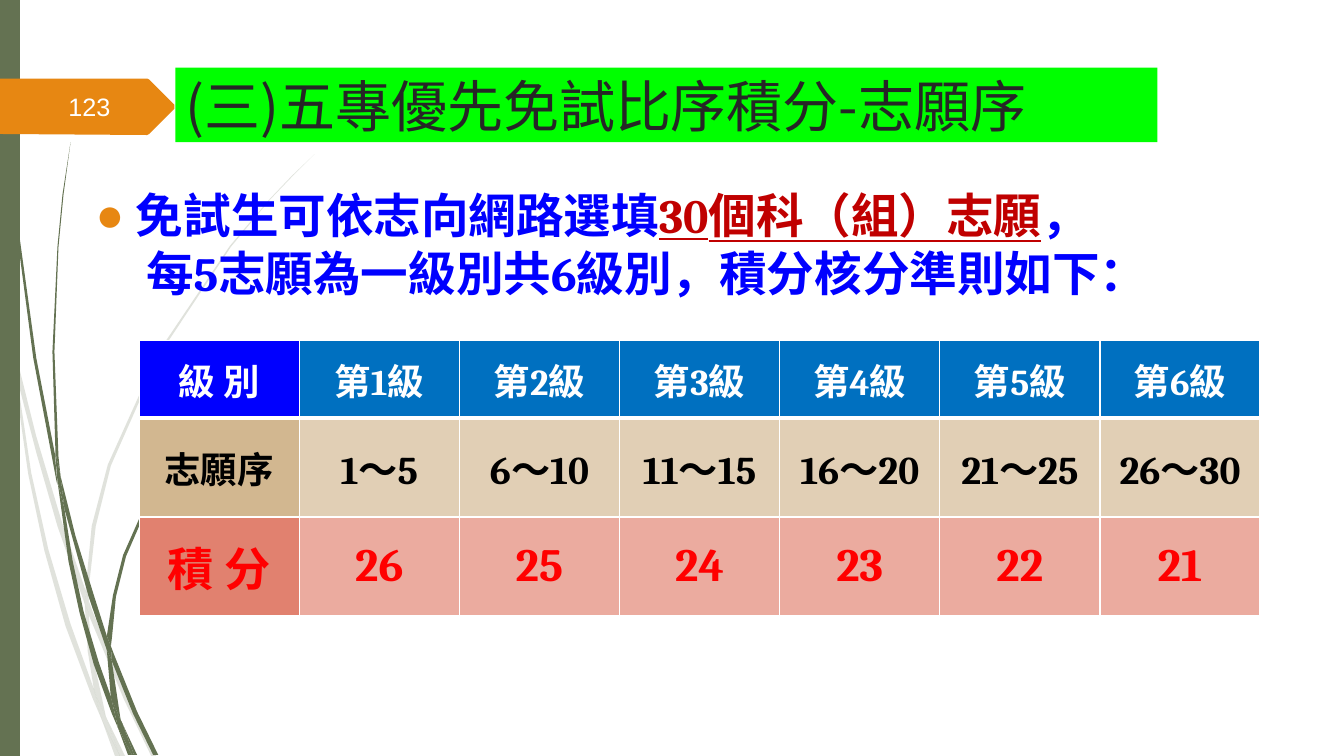
from dataclasses import dataclass

from lxml import etree
from pptx import Presentation
from pptx.dml.color import RGBColor
from pptx.enum import shapes as kinds, text as t
from pptx.oxml import ns
from pptx.util import Inches, Pt

GREEN = RGBColor(0x64, 0x72, 0x52)
ORANGE = RGBColor(0xE7, 0x87, 0x12)
LIME = RGBColor(0x00, 0xFF, 0x00)
CHARCOAL = RGBColor(0x26, 0x26, 0x26)
WHITE = RGBColor(0xFF, 0xFF, 0xFF)
BLACK = RGBColor(0x00, 0x00, 0x00)
BLUE = RGBColor(0x00, 0x00, 0xFF)
SKY = RGBColor(0x00, 0x70, 0xC0)
DARK_RED = RGBColor(0xC0, 0x00, 0x00)
RED = RGBColor(0xFF, 0x00, 0x00)
TAN = RGBColor(0xD2, 0xB7, 0x90)
SAND = RGBColor(0xE1, 0xCF, 0xB5)
CORAL = RGBColor(0xE1, 0x81, 0x6F)
PINK = RGBColor(0xEB, 0xAB, 0x9F)

CJK = "Noto Sans CJK SC"
SERIF = "Cambria"

Outline = tuple[tuple[float, float], ...]

PALE_STRANDS: tuple[Outline, ...] = (
    ((0.11, 3.5), (0.08, 3.22), (0, 2.82), (0, 2.99), (0.1, 3.44)),
    ((0.57, 5.22), (0.84, 5.99), (0.85, 5.86), (0.62, 5.2), (0.36, 4.33), (0.14, 3.45),
     (0.17, 3.76), (0.36, 4.49)),
    ((0.92, 6.07), (0.88, 5.96), (0.88, 6.1), (1.23, 6.94), (1.5, 7.5), (1.55, 7.5), (1.27, 6.92)),
    ((1.19, 7.5), (1.24, 7.5), (1.05, 7.11)),
    ((0.93, 6.83), (0.7, 6.19), (0.48, 5.45), (0.31, 4.69), (0.17, 3.76), (0.11, 3.5),
     (0.28, 4.7), (0.44, 5.46), (0.65, 6.21), (0.92, 6.93), (1.01, 7.14), (0.99, 7.07)),
    ((0.84, 5.99), (0.87, 6.46), (0.93, 6.83), (0.96, 6.92), (1.05, 7.11), (1.04, 7.06),
     (0.91, 6.46), (0.88, 6.1), (0.88, 6.08)),
    ((0.88, 5.84), (0.95, 5.22), (1.1, 4.62), (1.6, 3.49), (2.29, 2.45), (2.68, 1.98),
     (2.9, 1.75), (3.12, 1.53), (2.89, 1.75), (2.68, 1.97), (2.28, 2.44), (1.58, 3.48),
     (1.07, 4.61), (0.91, 5.22), (0.85, 5.84), (0.85, 5.86), (0.88, 5.96)),
    ((1.01, 7.14), (1.14, 7.5), (1.19, 7.5)),
    ((0.88, 6.08), (0.88, 6.1), (0.88, 5.96), (0.85, 5.86), (0.84, 5.99)),
    ((0.96, 6.92), (0.93, 6.83), (0.99, 7.07), (1.01, 7.14), (1.19, 7.5), (1.05, 7.11)),
)
DARK_STRANDS: tuple[Outline, ...] = (
    ((0.07, 1.1), (0.17, 2.33), (0.33, 3.55), (0.56, 4.77), (0.57, 4.81), (0.55, 4.57),
     (0.55, 4.53), (0.36, 3.55), (0.19, 2.32), (0.08, 1.09), (0.05, 0.48), (0.03, 0), (0.03, 0.48)),
    ((0.88, 5.92), (1.06, 6.45), (1.06, 6.33), (1.06, 6.31), (0.93, 5.9), (0.75, 5.32),
     (0.6, 4.72), (0.64, 5.05)),
    ((1.13, 6.49), (1.1, 6.41), (1.11, 6.56), (1.32, 7.08), (1.52, 7.49), (1.57, 7.49), (1.36, 7.06)),
    ((1.1, 6.91), (0.98, 6.57), (0.83, 6.07), (0.72, 5.56), (0.64, 5.05), (0.57, 4.77),
     (0.68, 5.57), (0.79, 6.08), (0.93, 6.59), (1.11, 7.08), (1.17, 7.22), (1.16, 7.17)),
    ((0.6, 4.72), (0.58, 4.53), (0.54, 3.49), (0.58, 2.45), (0.63, 1.93), (0.7, 1.41),
     (0.62, 1.93), (0.57, 2.45), (0.52, 3.49), (0.55, 4.49)),
    ((1.33, 7.49), (1.36, 7.49), (1.22, 7.19)),
    ((0.57, 4.77), (0.64, 5.05), (0.6, 4.72), (0.55, 4.49), (0.55, 4.53)),
    ((1.11, 6.33), (1.15, 5.92), (1.25, 5.52), (1.58, 4.76), (2.05, 4.06), (2.31, 3.74),
     (2.46, 3.59), (2.61, 3.44), (2.45, 3.58), (2.31, 3.73), (2.04, 4.05), (1.56, 4.74),
     (1.22, 5.51), (1.12, 5.91), (1.06, 6.31), (1.1, 6.41)),
    ((1.17, 7.22), (1.27, 7.49), (1.31, 7.49)),
    ((1.06, 6.45), (1.1, 6.92), (1.16, 7.06), (1.22, 7.19), (1.2, 7.16), (1.11, 6.56), (1.09, 6.51)),
    ((1.06, 6.45), (1.09, 6.51), (1.11, 6.56), (1.1, 6.41), (1.06, 6.31), (1.06, 6.33)),
    ((1.16, 7.06), (1.1, 6.91), (1.16, 7.17), (1.17, 7.22), (1.31, 7.49), (1.33, 7.49), (1.22, 7.19)),
)
BAR: Outline = ((0, 0), (0.2, 0), (0.2, 7.5), (0, 7.5))
NUMBER_TAG: Outline = ((1.73, 1.08), (1.48, 1.33), (1.46, 1.34), (0, 1.33), (0, 0.78),
                       (1.46, 0.78), (1.48, 0.79), (1.73, 1.04))


@dataclass(frozen=True)
class ScoreRow:
    height: float
    label: str
    values: tuple[str, ...]
    label_size: int
    value_size: int
    color: RGBColor
    label_fill: RGBColor
    value_fill: RGBColor
    bottom_line: float = 1


LEVELS = range(1, 7)
SCORE_ROWS = (
    ScoreRow(0.77, "級 別", tuple(f"第{n}級" for n in LEVELS), 26, 26, WHITE, BLUE, SKY, 3),
    ScoreRow(0.98, "志願序", tuple(f"{5 * n - 4}～{5 * n}" for n in LEVELS), 26, 28, BLACK, TAN, SAND),
    ScoreRow(0.98, "積 分", tuple(str(27 - n) for n in LEVELS), 33, 33, RED, CORAL, PINK),
)


def write(para, content: str, *, size: float, color: RGBColor, latin: str = SERIF,
          bold: bool = False, underline: bool = False) -> None:
    span = para.add_run()
    span.text = content
    span.font.size = Pt(size)
    span.font.color.rgb = color
    span.font.name = latin
    span.font.bold = bold
    span.font.underline = underline
    etree.SubElement(span.font._element, ns.qn("a:ea"), typeface=CJK)


def draw_outline(page, outline: Outline, color: RGBColor, opacity: int = 100) -> None:
    points = [(Inches(x), Inches(y)) for x, y in outline]
    builder = page.shapes.build_freeform(*points[0])
    builder.add_line_segments(points[1:], close=True)
    shape = builder.convert_to_shape()
    shape.shadow.inherit = False
    shape.fill.solid()
    shape.fill.fore_color.rgb = color
    shape.line.fill.background()
    if opacity < 100:
        tint = next(shape._element.spPr.iter(ns.qn("a:srgbClr")))
        etree.SubElement(tint, ns.qn("a:alpha"), val=str(opacity * 1000))


def add_text_box(page, left: float, top: float, width: float, height: float):
    box = page.shapes.add_textbox(Inches(left), Inches(top), Inches(width), Inches(height))
    box.text_frame.word_wrap = True
    return box.text_frame


def indent(para, margin: float, first: float, bullet: bool) -> None:
    props = para._p.get_or_add_pPr()
    props.set("marL", str(Inches(margin)))
    props.set("indent", str(Inches(first)))
    if bullet:
        tint = etree.SubElement(props, ns.qn("a:buClr"))
        etree.SubElement(tint, ns.qn("a:srgbClr"), val=str(ORANGE))
        etree.SubElement(props, ns.qn("a:buFont"), typeface="Arial")
        etree.SubElement(props, ns.qn("a:buChar"), char="●")
    para.line_spacing = 1.0


def add_border(cell, side: str, width: float) -> None:
    line = etree.SubElement(cell._tc.get_or_add_tcPr(), ns.qn(f"a:ln{side}"), w=str(Pt(width)))
    fill = etree.SubElement(line, ns.qn("a:solidFill"))
    etree.SubElement(fill, ns.qn("a:srgbClr"), val=str(WHITE))


def add_score_table(page) -> None:
    columns = len(LEVELS) + 1
    table = page.shapes.add_table(len(SCORE_ROWS), columns, Inches(1.38), Inches(3.38),
                                  Inches(11.12), Inches(2.72)).table
    table.horz_banding = False
    top_line = 1.0
    for r, row in enumerate(SCORE_ROWS):
        table.rows[r].height = Inches(row.height)
        for c, content in enumerate((row.label, *row.values)):
            cell = table.cell(r, c)
            for side, width in (("L", 1), ("R", 1), ("T", top_line), ("B", row.bottom_line)):
                add_border(cell, side, width)
            cell.fill.solid()
            cell.fill.fore_color.rgb = row.value_fill if c else row.label_fill
            cell.vertical_anchor = t.MSO_ANCHOR.MIDDLE
            para = cell.text_frame.paragraphs[0]
            para.alignment = t.PP_ALIGN.CENTER
            write(para, content, size=row.value_size if c else row.label_size, color=row.color,
                  latin=SERIF if c else CJK, bold=True)
        top_line = row.bottom_line


def add_title(page) -> None:
    title = page.shapes.title
    title.left, title.top, title.width, title.height = map(Inches, (1.74, 0.67, 9.74, 0.74))
    title.fill.solid()
    title.fill.fore_color.rgb = LIME
    title.text_frame.auto_size = t.MSO_AUTO_SIZE.NONE
    title.text_frame.vertical_anchor = t.MSO_ANCHOR.MIDDLE
    para = title.text_frame.paragraphs[0]
    para.alignment = t.PP_ALIGN.LEFT
    write(para, "(三)五專優先免試比序積分-志願序", size=40, color=CHARCOAL, latin=CJK)


def add_rules(page) -> None:
    frame = add_text_box(page, 0.85, 1.8, 12.18, 1.5)
    first = frame.paragraphs[0]
    indent(first, 0.4, -0.4, True)
    write(first, "免試生可依志向網路選填", size=34, color=BLUE, latin=CJK, bold=True)
    write(first, "30個", size=34, color=DARK_RED, bold=True, underline=True)
    write(first, "科（組）志願", size=34, color=DARK_RED, latin=CJK, bold=True, underline=True)
    write(first, "，", size=34, color=BLUE, latin=CJK, bold=True)
    second = frame.add_paragraph()
    indent(second, 0.5, 0, False)
    write(second, "每5志願為一級別共6級別，積分核分準則如下：", size=34, color=BLUE, bold=True)


def main() -> None:
    deck = Presentation()
    deck.slide_width, deck.slide_height = Inches(13.33), Inches(7.5)
    page = deck.slides.add_slide(deck.slide_layouts[5])
    for strand in PALE_STRANDS:
        draw_outline(page, strand, GREEN, 20)
    for outline in (*DARK_STRANDS, BAR):
        draw_outline(page, outline, GREEN)
    draw_outline(page, NUMBER_TAG, ORANGE)
    add_rules(page)
    add_score_table(page)
    add_title(page)
    number = add_text_box(page, 0.58, 0.86, 0.85, 0.4)
    number.vertical_anchor = t.MSO_ANCHOR.MIDDLE
    write(number.paragraphs[0], "123", size=18, color=WHITE, latin="Arial")
    deck.save("out.pptx")


if __name__ == "__main__":
    main()
